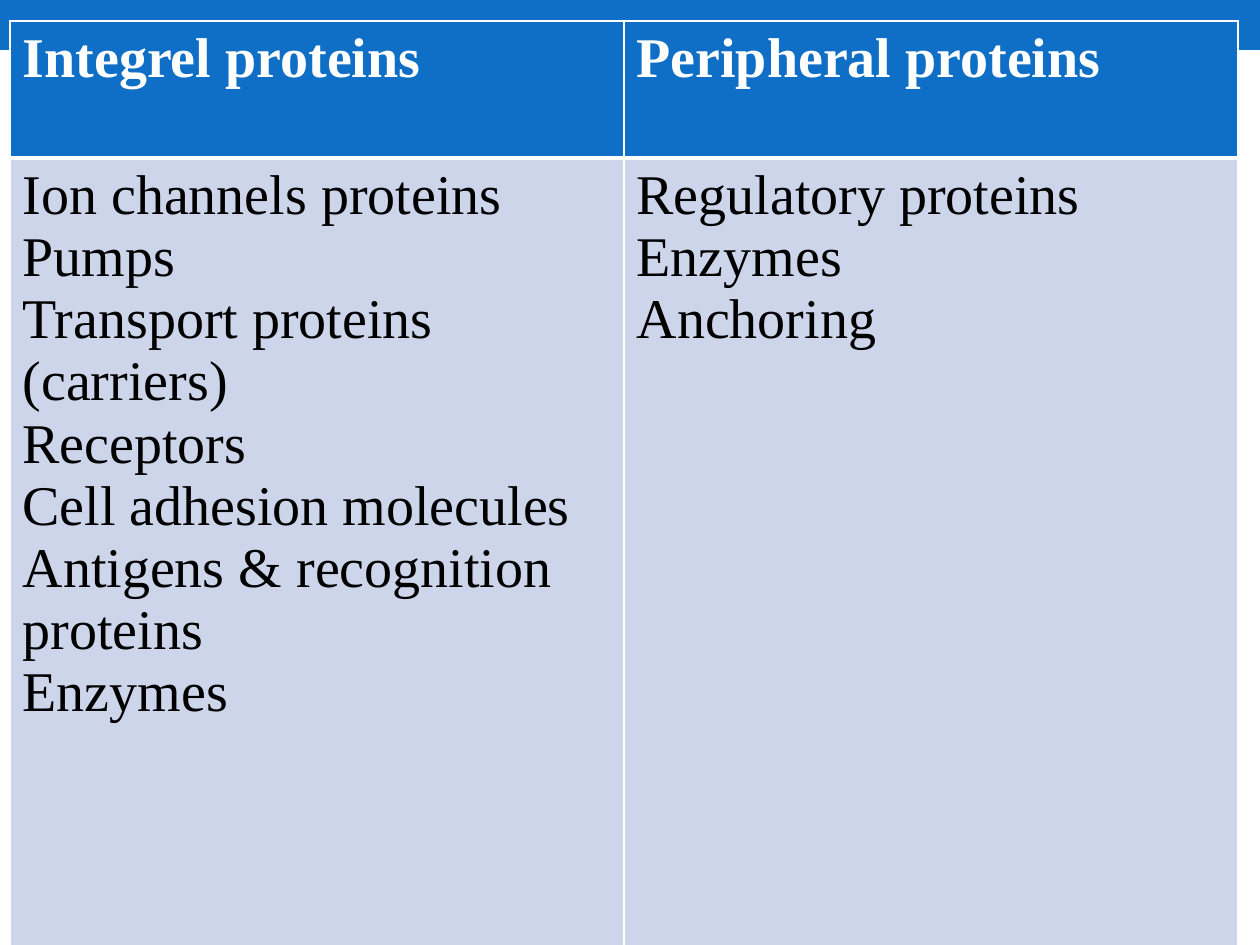
from pptx import Presentation
from pptx.dml.color import RGBColor
from pptx.enum.shapes import MSO_SHAPE
from pptx.oxml import parse_xml
from pptx.oxml.ns import nsdecls
from pptx.util import Pt

THEME = {"blue": "0F6FC6", "pale": "CCD5EA", "white": "FFFFFF",
         "black": "000000", "font": "Times New Roman", "size": 32}
HEADS = ["Integrel proteins", "Peripheral proteins"]
LISTS = [
    ["Ion channels proteins", "Pumps", "Transport proteins (carriers)",
     "Receptors", "Cell adhesion molecules",
     "Antigens & recognition proteins", "Enzymes"],
    ["Regulatory proteins", "Enzymes", "Anchoring"],
]


def px(n):
    return round(n * 914400 / 126)


def edge(cell, side, width):
    line = parse_xml(
        f'<a:{side} {nsdecls("a")} w="{Pt(width)}"><a:solidFill>'
        f'<a:srgbClr val="{THEME["white"]}"/></a:solidFill></a:{side}>')
    props = cell._tc.get_or_add_tcPr()
    # Borders come before the fill, in order
    props.insert(len(props) - 1, line)


deck = Presentation()
deck.slide_width, deck.slide_height = px(1260), px(945)
slide = deck.slides.add_slide(deck.slide_layouts[6])

# Top band
band = slide.shapes.add_shape(MSO_SHAPE.RECTANGLE, 0, 0, px(1260), px(50))
band.shadow.inherit = False
band.fill.solid()
band.fill.fore_color.rgb = RGBColor.from_string(THEME["blue"])
band.line.fill.background()

# Table grid
table = slide.shapes.add_table(
    2, 2, px(10), px(21), px(1228), px(948)).table
for col in table.columns:
    col.width = px(614)
for row, high in zip(table.rows, (137, 811)):
    row.height = px(high)

# Cells: a bold header row over the lists
rows = [([[head] for head in HEADS], "blue", "white", True, 3),
        (LISTS, "pale", "black", False, 1)]
for r, (texts, fill, ink, bold, base) in enumerate(rows):
    for c, lines in enumerate(texts):
        cell = table.cell(r, c)
        cell.fill.solid()
        cell.fill.fore_color.rgb = RGBColor.from_string(THEME[fill])
        top = 1 if r == 0 else 3
        for side, width in (("lnL", 1), ("lnR", 1), ("lnT", top), ("lnB", base)):
            edge(cell, side, width)
        cell.text_frame.text = "\n".join(lines)
        for para in cell.text_frame.paragraphs:
            font = para.runs[0].font
            font.name, font.size, font.bold = THEME["font"], Pt(THEME["size"]), bold
            font.color.rgb = RGBColor.from_string(THEME[ink])

deck.save("out.pptx")
